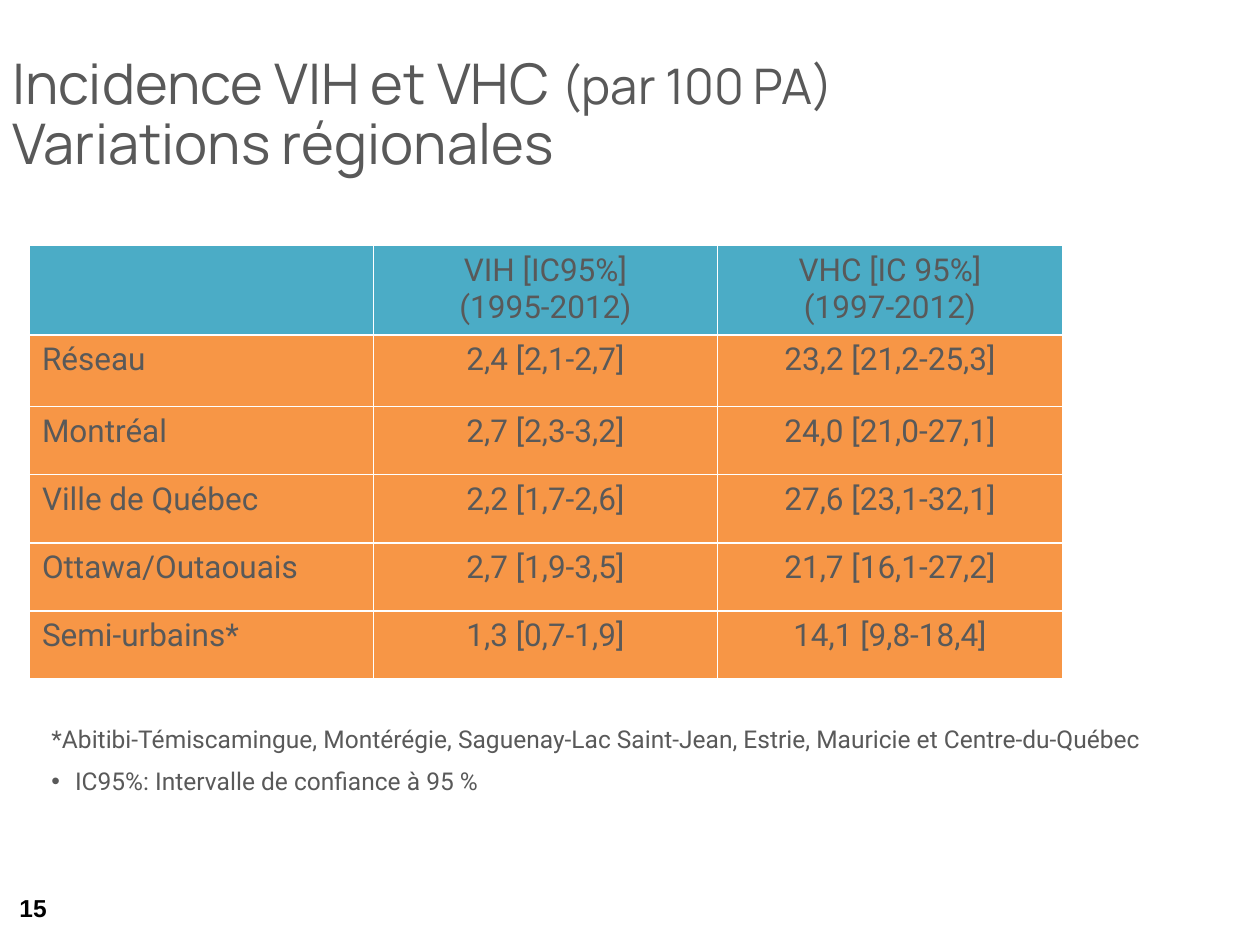
from lxml.etree import SubElement
from pptx import Presentation
from pptx.dml.color import RGBColor
from pptx.enum.text import MSO_ANCHOR, MSO_AUTO_SIZE, PP_ALIGN
from pptx.oxml.ns import qn
from pptx.util import Pt

COLORS = {"text": "595959", "header": "4BACC6", "body": "F79646", "number": "000000"}

COLUMN_WIDTHS = [196.6, 196.6, 197.2]
ROW_HEIGHTS = [51, 41] + [38.9] * 4
INCIDENCE = [
    ["", "VIH [IC95%]\n(1995-2012)", "VHC [IC 95%]\n(1997-2012)"],
    ["Réseau", "2,4 [2,1-2,7]", "23,2 [21,2-25,3]"],
    ["Montréal", "2,7 [2,3-3,2]", "24,0 [21,0-27,1]"],
    ["Ville de Québec", "2,2 [1,7-2,6]", "27,6 [23,1-32,1]"],
    ["Ottawa/Outaouais", "2,7 [1,9-3,5]", "21,7 [16,1-27,2]"],
    ["Semi-urbains*", "1,3 [0,7-1,9]", "14,1 [9,8-18,4]"],
]
NOTES = [
    ("*Abitibi-Témiscamingue, Montérégie, Saguenay-Lac Saint-Jean, "
     "Estrie, Mauricie et Centre-du-Québec", False),
    ("IC95%: Intervalle de confiance à 95 %", True),
]


def add_run(paragraph, text, size, font="Roboto", color="text", bold=False):
    run = paragraph.add_run()
    run.text = text
    run.font.name = font
    run.font.size = Pt(size)
    run.font.bold = bold
    run.font.color.rgb = RGBColor.from_string(COLORS[color])


def nth_paragraph(frame, index):
    return frame.add_paragraph() if index else frame.paragraphs[0]


def add_text_frame(slide, left, top, width, height):
    frame = slide.shapes.add_textbox(Pt(left), Pt(top), Pt(width), Pt(height)).text_frame
    frame.word_wrap = True
    return frame


def fill_title(slide):
    title = slide.shapes.title
    title.left, title.top, title.width, title.height = Pt(0), Pt(21.6), Pt(648), Pt(90)
    frame = title.text_frame
    frame.auto_size = MSO_AUTO_SIZE.NONE
    frame.vertical_anchor = MSO_ANCHOR.MIDDLE
    heading = frame.paragraphs[0]
    heading.alignment = PP_ALIGN.LEFT
    heading.line_spacing = 0.9
    add_run(heading, "Incidence VIH et VHC ", 32, "Manrope")
    add_run(heading, "(par 100 PA)", 28, "Manrope")
    heading.add_line_break()
    add_run(heading, "Variations régionales", 32, "Manrope")


def fill_cell(cell, text, color, alignment):
    cell.fill.solid()
    cell.fill.fore_color.rgb = RGBColor.from_string(COLORS[color])
    if not text:
        return
    for index, line in enumerate(text.split("\n")):
        paragraph = nth_paragraph(cell.text_frame, index)
        paragraph.alignment = alignment
        add_run(paragraph, line, 18)


def add_incidence_table(slide):
    table = slide.shapes.add_table(
        len(ROW_HEIGHTS), len(COLUMN_WIDTHS), Pt(16.8), Pt(140.4),
        Pt(sum(COLUMN_WIDTHS)), Pt(sum(ROW_HEIGHTS))).table
    table.first_row = table.horz_banding = False
    for column, width in zip(table.columns, COLUMN_WIDTHS):
        column.width = Pt(width)
    for row, height in zip(table.rows, ROW_HEIGHTS):
        row.height = Pt(height)
    for row_index, values in enumerate(INCIDENCE):
        for column_index, text in enumerate(values):
            fill_cell(table.cell(row_index, column_index), text,
                      "body" if row_index else "header",
                      PP_ALIGN.CENTER if column_index else PP_ALIGN.LEFT)


def add_notes(slide):
    frame = add_text_frame(slide, 22.3, 410.4, 661, 49.7)
    for index, (text, bulleted) in enumerate(NOTES):
        paragraph = nth_paragraph(frame, index)
        properties = paragraph._p.get_or_add_pPr()
        properties.set("marL", str(Pt(13.5)))
        properties.set("indent", str(Pt(-13.5)))
        if bulleted:
            SubElement(properties, qn("a:buFont"), typeface="Arial")
            SubElement(properties, qn("a:buChar"), char="•")
        if index:
            paragraph.space_before = Pt(7)
        add_run(paragraph, text, 14)


def add_slide_number(slide):
    number = add_text_frame(slide, -18, 506.9, 51.8, 37.4).paragraphs[0]
    number.alignment = PP_ALIGN.RIGHT
    add_run(number, "15", 14, "Arial", "number", True)


def main():
    presentation = Presentation()
    presentation.slide_width, presentation.slide_height = Pt(720), Pt(540)
    slide = presentation.slides.add_slide(presentation.slide_layouts[5])
    add_slide_number(slide)
    fill_title(slide)
    add_incidence_table(slide)
    add_notes(slide)
    presentation.save("out.pptx")


if __name__ == "__main__":
    main()
